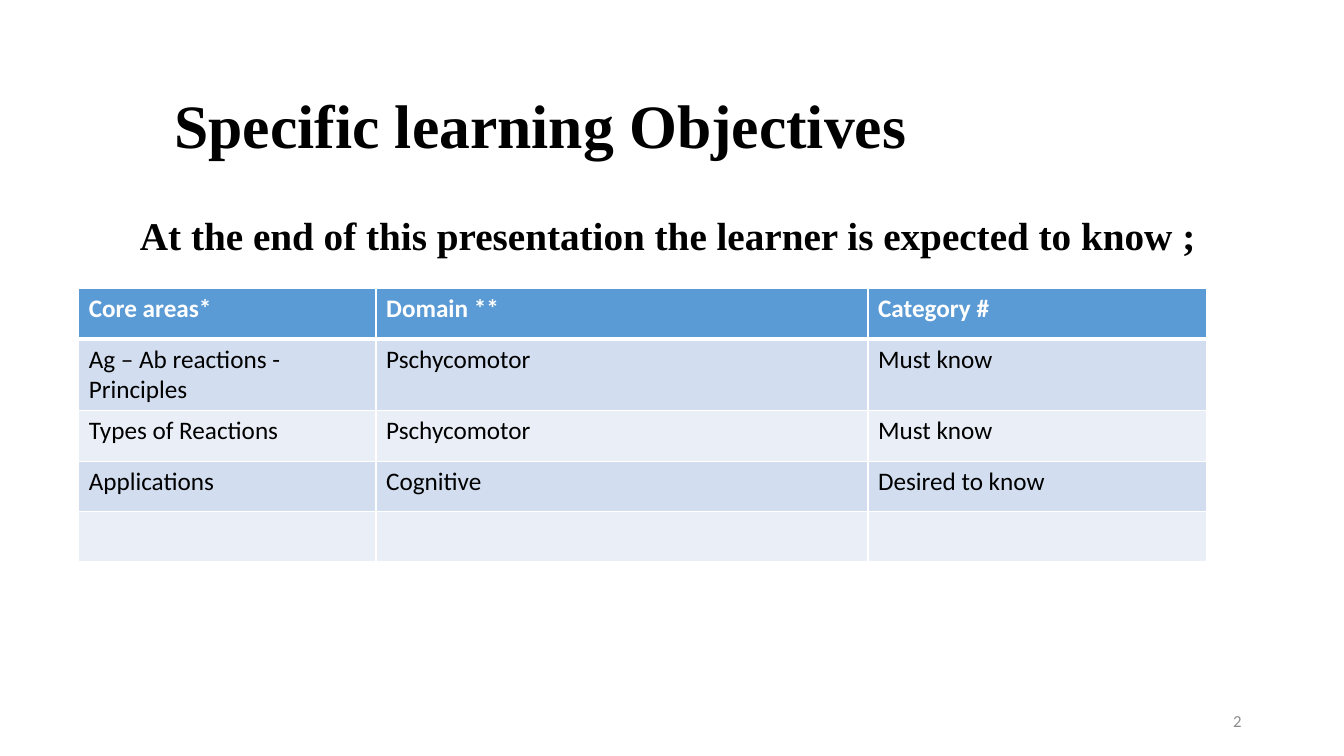
from lxml.etree import SubElement
from pptx import Presentation
from pptx.dml.color import RGBColor
from pptx.enum.text import MSO_ANCHOR as Anchor, MSO_AUTO_SIZE as AutoSize, PP_ALIGN as Align
from pptx.oxml.ns import qn
from pptx.util import Pt

SERIF, SANS = "Times New Roman", "Calibri"
BLACK, WHITE, GREY = "000000", "FFFFFF", "8C8C8C"
HEADER_FILL, BAND_FILLS = "5B9BD5", ("D2DEEF", "EAEFF7")
COLUMN_WIDTHS = (212.4, 351.4, 242)
ROW_HEIGHT = 36
OBJECTIVES = (
    ("Core areas*", "Domain **", "Category #"),
    ("Ag – Ab reactions - Principles", "Pschycomotor", "Must know"),
    ("Types of Reactions", "Pschycomotor", "Must know"),
    ("Applications", "Cognitive", "Desired to know"),
    ("", "", ""),
)


def rgb(value):
    return RGBColor.from_string(value)


def write(tf, text, size, name, color, bold=False, align=Align.LEFT):
    p = tf.paragraphs[0]
    p.alignment = align
    font = p.font
    if text:
        r = p.add_run()
        r.text = text
        font = r.font
    for key, value in dict(size=Pt(size), name=name, bold=bold).items():
        setattr(font, key, value)
    font.color.rgb = rgb(color)
    return p


def add_title(s, box, text):
    sp = s.shapes.title
    for key, value in zip(("left", "top", "width", "height"), box):
        setattr(sp, key, Pt(value))
    tf = sp.text_frame
    tf.auto_size = AutoSize.NONE
    tf.vertical_anchor = Anchor.MIDDLE
    write(tf, text, 44, SERIF, BLACK, bold=True).line_spacing = 0.9


def add_text(s, box, text, anchor=Anchor.TOP, **style):
    tf = s.shapes.add_textbox(*map(Pt, box)).text_frame
    tf.word_wrap = True
    tf.vertical_anchor = anchor
    write(tf, text, **style)


def set_borders(cell, **widths):
    """Draw white cell borders; widths are in points, keyed by side L, R, T, B."""
    tc_pr = cell._tc.get_or_add_tcPr()
    for side, width in widths.items():
        ln = SubElement(tc_pr, qn(f"a:ln{side}"), w=str(Pt(width)))
        fill = SubElement(ln, qn("a:solidFill"))
        SubElement(fill, qn("a:srgbClr"), val=WHITE)


def add_table(s, left, top, rows):
    table = s.shapes.add_table(len(rows), len(COLUMN_WIDTHS), Pt(left), Pt(top),
                               Pt(sum(COLUMN_WIDTHS)), Pt(ROW_HEIGHT * len(rows))).table
    for column, width in zip(table.columns, COLUMN_WIDTHS):
        column.width = Pt(width)
    for i, texts in enumerate(rows):
        table.rows[i].height = Pt(ROW_HEIGHT)
        header = i == 0
        for j, text in enumerate(texts):
            cell = table.cell(i, j)
            set_borders(cell, L=1, R=1, T=3 if i == 1 else 1, B=3 if header else 1)
            cell.fill.solid()
            cell.fill.fore_color.rgb = rgb(HEADER_FILL if header else BAND_FILLS[(i - 1) % 2])
            write(cell.text_frame, text, 18, SANS, WHITE if header else BLACK, bold=header)


def main():
    prs = Presentation()
    prs.slide_width, prs.slide_height = Pt(960), Pt(540)
    s = prs.slides.add_slide(prs.slide_layouts[5])
    add_title(s, (117.4, 48.2, 729.4, 87.1), "Specific learning Objectives")
    add_table(s, 56.2, 206.2, OBJECTIVES)
    add_text(s, (92.9, 147.6, 771.1, 41),
             "At the end of this presentation the learner is expected to know ;",
             size=28, name=SERIF, color=BLACK, bold=True)
    add_text(s, (678, 500.5, 216, 28.8), "2", Anchor.MIDDLE,
             size=12, name=SANS, color=GREY, align=Align.RIGHT)
    prs.save("out.pptx")


if __name__ == "__main__":
    main()
